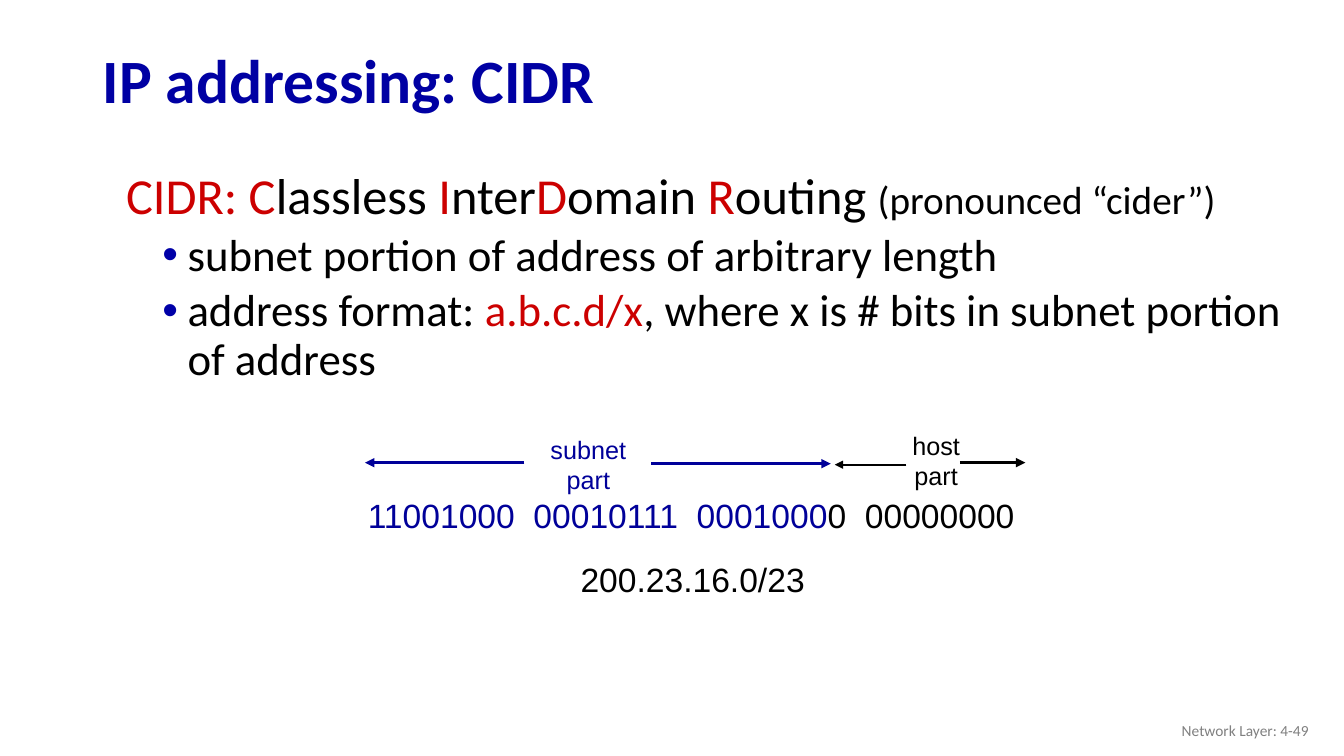
from lxml import etree
from pptx import Presentation
from pptx.dml.color import RGBColor
from pptx.enum.shapes import MSO_CONNECTOR
from pptx.enum.text import MSO_ANCHOR, MSO_AUTO_SIZE, PP_ALIGN
from pptx.oxml.ns import qn
from pptx.util import Inches, Pt

TITLE_BLUE = RGBColor(0x00, 0x00, 0xA3)
BULLET_BLUE = "0000A8"
SUBNET_BLUE = RGBColor(0x00, 0x00, 0x99)
RED = RGBColor(0xCC, 0x00, 0x00)
BLACK = RGBColor(0x00, 0x00, 0x00)
GRAY = RGBColor(0x80, 0x80, 0x80)

LEFT, CENTER, RIGHT = PP_ALIGN.LEFT, PP_ALIGN.CENTER, PP_ALIGN.RIGHT
TOP, MIDDLE = MSO_ANCHOR.TOP, MSO_ANCHOR.MIDDLE
NO_AUTOFIT = MSO_AUTO_SIZE.NONE
STRAIGHT = MSO_CONNECTOR.STRAIGHT


def write_text(shape, paragraphs, box, size, font="Calibri", color=BLACK, bold=False,
               align=LEFT, anchor=TOP, wrap=True, line_spacing=1.0):
    """Place a shape and fill it; a run is (text, color, size), the last two optional."""
    shape.left, shape.top, shape.width, shape.height = map(Inches, box)
    frame = shape.text_frame
    frame.auto_size = NO_AUTOFIT
    frame.word_wrap = wrap
    frame.vertical_anchor = anchor
    for index, runs in enumerate(paragraphs):
        paragraph = frame.add_paragraph() if index else frame.paragraphs[0]
        paragraph.alignment = align
        paragraph.line_spacing = line_spacing
        for text, *style in runs:
            run = paragraph.add_run()
            run.text = text
            run.font.name = font
            run.font.bold = bold
            run.font.color.rgb = style[0] if style else color
            run.font.size = Pt(style[1] if len(style) > 1 else size)


presentation = Presentation()
presentation.slide_width = Inches(13.33)
presentation.slide_height = Inches(7.5)
slide = presentation.slides.add_slide(presentation.slide_layouts[1])

# Title
write_text(slide.shapes.title, [[("IP addressing: CIDR",)]], (0.92, 0.34, 11.5, 0.98), 44,
           color=TITLE_BLUE, bold=True, anchor=MIDDLE, line_spacing=0.9)

# Definition and its two bullets
body = slide.placeholders[1]
definition = [("CIDR: C", RED), ("lassless ",), ("I", RED), ("nter",), ("D", RED), ("omain ",),
              ("R", RED), ("outing ",), ("(pronounced “cider”)", BLACK, 28)]
bullets = [
    [("subnet portion of address of arbitrary length",)],
    [("address format: ",), ("a.b.c.d/x", RED),
     (", where x is # bits in subnet portion of address",)],
]
body_runs = [[(text, *(style or [BLACK]), 36)[:3] for text, *style in definition]] + bullets
write_text(body, body_runs, (1, 1.65, 12.13, 2.27), 32, line_spacing=0.9)
for index, paragraph in enumerate(body.text_frame.paragraphs):
    is_bullet = index > 0
    paragraph.level = int(is_bullet)
    paragraph.space_before = Pt(5 if is_bullet else 10)
    properties = paragraph._p.get_or_add_pPr()
    properties.set("marL", str(Inches(0.76 if is_bullet else 0.39)))
    properties.set("indent", str(Inches(-0.25 if is_bullet else -0.24)))
    if is_bullet:
        bullet_color = etree.SubElement(properties, qn("a:buClr"))
        etree.SubElement(bullet_color, qn("a:srgbClr"), val=BULLET_BLUE)
        etree.SubElement(properties, qn("a:buFont"), typeface="Arial")
        etree.SubElement(properties, qn("a:buChar"), char="•")
    else:
        etree.SubElement(properties, qn("a:buNone"))

# Example address with its part labels
address_bits = [[("11001000  00010111  0001000", SUBNET_BLUE), ("0  00000000",)]]
labels = [
    (address_bits, (3.55, 4.86, 6.7, 0.5), 24, BLACK, LEFT),
    ([[("subnet",)], [("part",)]], (5.36, 4.26, 0.95, 0.7), 18, SUBNET_BLUE, CENTER),
    ([[("host",)], [("part",)]], (8.95, 4.22, 0.67, 0.7), 18, BLACK, CENTER),
    ([[("200.23.16.0/23",)]], (5.66, 5.5, 2.43, 0.5), 24, BLACK, LEFT),
]
for paragraphs, box, size, color, align in labels:
    write_text(slide.shapes.add_textbox(0, 0, 0, 0), paragraphs, box, size, font="Arial",
               color=color, align=align, wrap=False)

# Arrows spanning the subnet and host parts: start x, end x, y, color, width
arrows = [
    (5.2, 3.62, 4.59, SUBNET_BLUE, 2.25),
    (6.46, 8.24, 4.6, SUBNET_BLUE, 2.25),
    (8.99, 8.28, 4.61, BLACK, 1.5),
    (9.52, 10.17, 4.59, BLACK, 2.25),
]
for start, end, y, color, width in arrows:
    arrow = slide.shapes.add_connector(STRAIGHT, Inches(start), Inches(y), Inches(end), Inches(y))
    arrow.line.color.rgb = color
    arrow.line.width = Pt(width)
    etree.SubElement(arrow.line._get_or_add_ln(), qn("a:tailEnd"), type="triangle")
    etree.SubElement(arrow._element.spPr, qn("a:effectLst"))

# Footer
write_text(slide.shapes.add_textbox(0, 0, 0, 0), [[("Network Layer: 4-49",)]],
           (10.08, 7.05, 3, 0.4), 11, color=GRAY, align=RIGHT, anchor=MIDDLE)

presentation.save("out.pptx")
